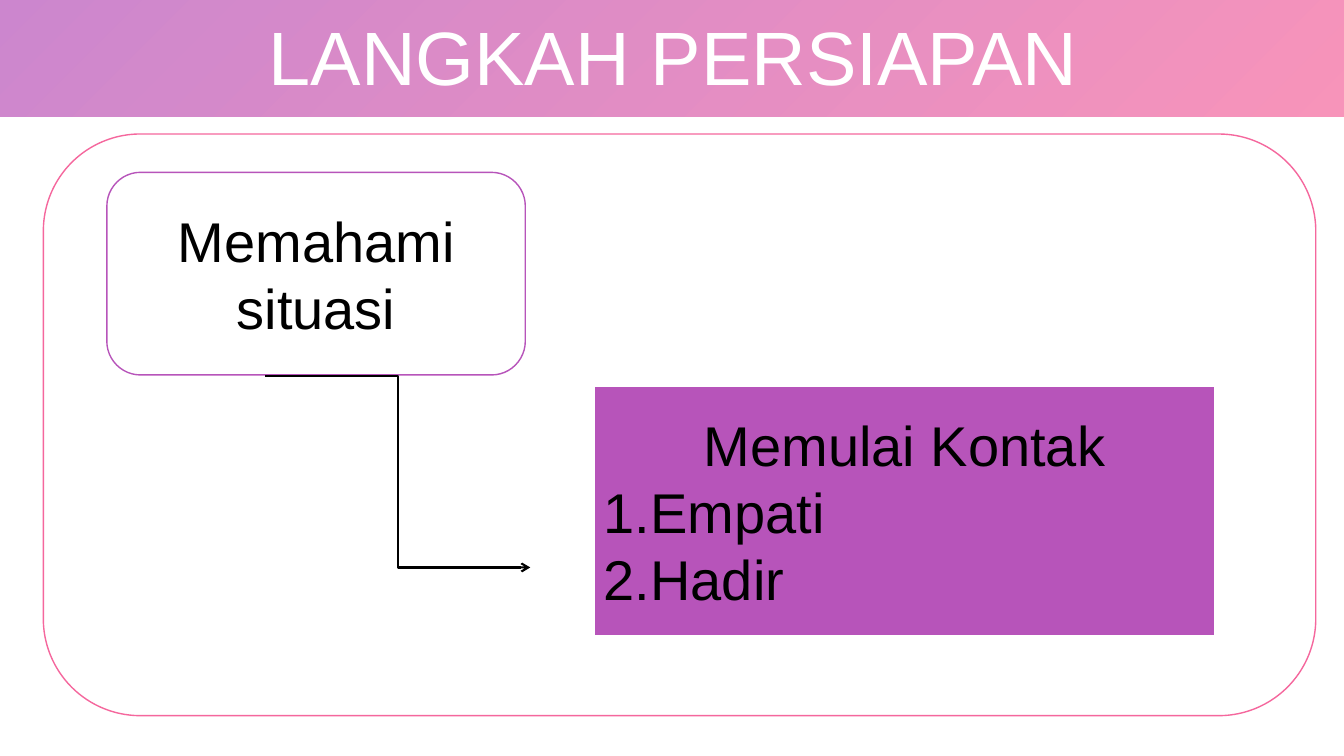
"""Build the LANGKAH PERSIAPAN slide: a banner, a frame and two linked steps."""
from lxml.etree import SubElement
from pptx import Presentation
from pptx.dml.color import RGBColor
from pptx.enum.shapes import MSO_CONNECTOR, MSO_SHAPE as Shape
from pptx.enum.text import MSO_ANCHOR, PP_ALIGN as Align
from pptx.oxml.ns import qn
from pptx.util import Inches, Pt

TITLE = "LANGKAH PERSIAPAN"
FIRST_STEP = "Memahami situasi"
SECOND_STEP = "Memulai Kontak"
SECOND_POINTS = ["Empati", "Hadir"]

FONT = "Arial"
WHITE = RGBColor(0xFF, 0xFF, 0xFF)
BLACK = RGBColor(0x00, 0x00, 0x00)
PINK = RGBColor(0xF5, 0x67, 0x9D)
PURPLE = RGBColor(0xB7, 0x54, 0xBA)

WIDTH, HEIGHT = 13.33, 7.5
BANNER = (0, 0, WIDTH, 1.16)
TITLE_AREA = (0.35, 0.21, 12.66, 0.79)
FRAME = (0.43, 1.33, 12.62, 5.77)
FIRST_BOX = (1.06, 1.71, 4.15, 2.01)
SECOND_BOX = (5.89, 3.83, 6.16, 2.48)
ARROW = (2.63, 3.73, 5.26, 5.63)
HANGING = Inches(0.38)


def add_box(page, kind, area, fill=None, line=None, weight=1):
    box = page.shapes.add_shape(kind, *map(Inches, area))
    box.shadow.inherit = False
    if fill is not None:
        box.fill.solid()
        box.fill.fore_color.rgb = fill
    if line is None:
        box.line.fill.background()
    else:
        box.line.color.rgb = line
        box.line.width = Pt(weight)
    return box


def write(box, lines, size, color):
    frame = box.text_frame
    frame.word_wrap = True
    frame.vertical_anchor = MSO_ANCHOR.MIDDLE
    frame.text = "\n".join(lines)
    for para in frame.paragraphs:
        para.alignment = Align.CENTER
        for span in para.runs:
            span.font.name = FONT
            span.font.size = Pt(size)
            span.font.color.rgb = color
    return frame.paragraphs


def number(para):
    para.alignment = Align.LEFT
    properties = para._p.get_or_add_pPr()
    properties.set("marL", str(HANGING))
    properties.set("indent", str(-HANGING))
    SubElement(properties, qn("a:buFont"), typeface=FONT)
    SubElement(properties, qn("a:buAutoNum"), type="arabicPeriod")


def add_banner(page):
    banner = add_box(page, Shape.RECTANGLE, BANNER)
    banner.fill.gradient()
    banner.fill.gradient_angle = 135
    for stop, color in zip(banner.fill.gradient_stops, (PINK, PURPLE)):
        stop.color.rgb = color
    for color in banner._element.spPr.iter(qn("a:srgbClr")):
        SubElement(color, qn("a:alpha"), val="70000")
    title = page.shapes.add_textbox(*map(Inches, TITLE_AREA))
    para = write(title, [TITLE], 54, WHITE)[0]
    para.line_spacing = 0.9
    para.space_before = Pt(10)


def add_arrow(page):
    arrow = page.shapes.add_connector(MSO_CONNECTOR.ELBOW, *map(Inches, ARROW))
    arrow.line.color.rgb = BLACK
    arrow.line.width = Pt(1.5)
    SubElement(arrow.line._get_or_add_ln(), qn("a:tailEnd"), type="arrow")
    SubElement(arrow._element.spPr, qn("a:effectLst"))


def main():
    deck = Presentation()
    deck.slide_width, deck.slide_height = Inches(WIDTH), Inches(HEIGHT)
    page = deck.slides.add_slide(deck.slide_layouts[6])
    add_banner(page)
    add_box(page, Shape.ROUNDED_RECTANGLE, FRAME, WHITE, PINK)
    first = add_box(page, Shape.ROUNDED_RECTANGLE, FIRST_BOX, WHITE, PURPLE)
    write(first, [FIRST_STEP], 40, BLACK)
    second = add_box(page, Shape.RECTANGLE, SECOND_BOX, PURPLE, WHITE, 1.5)
    for para in write(second, [SECOND_STEP, *SECOND_POINTS], 40, BLACK)[1:]:
        number(para)
    add_arrow(page)
    deck.save("out.pptx")


if __name__ == "__main__":
    main()
